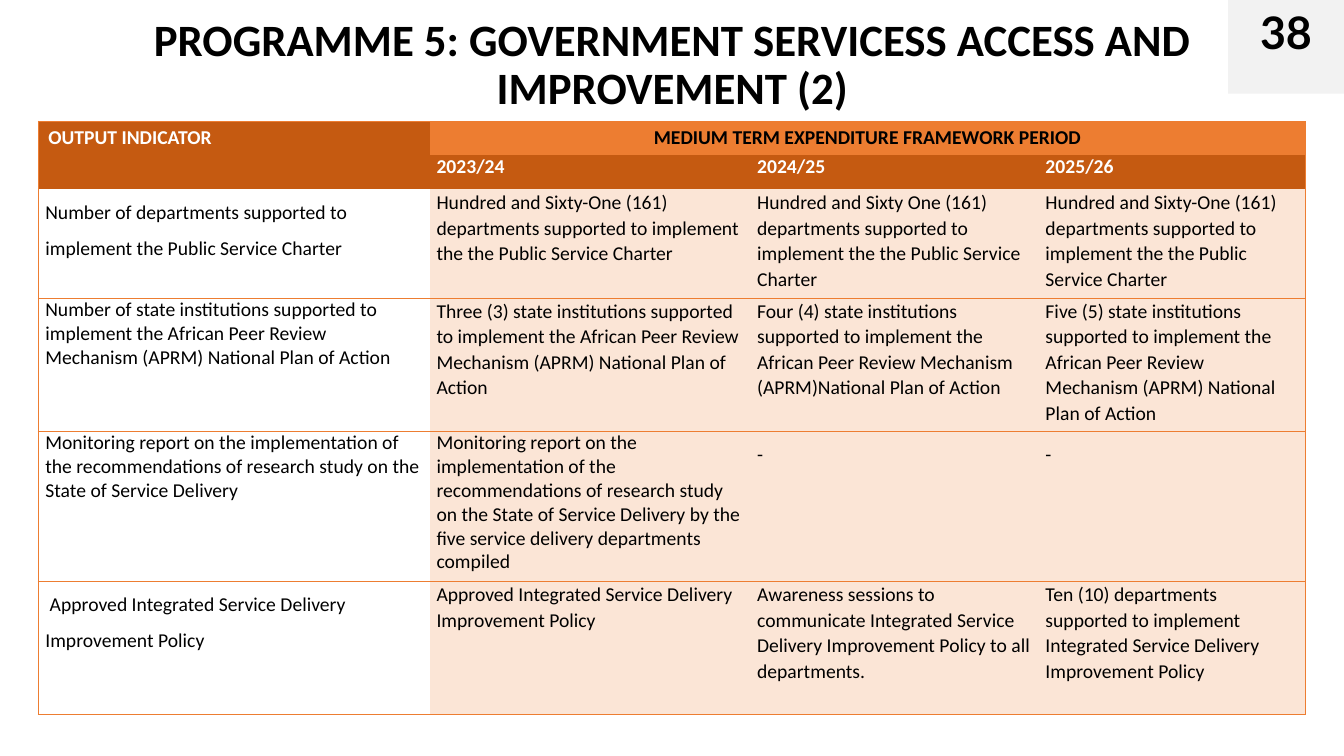
from dataclasses import dataclass

from lxml.etree import SubElement
from pptx import Presentation
from pptx.dml.color import RGBColor
from pptx.enum.shapes import MSO_SHAPE
from pptx.enum.text import MSO_ANCHOR, PP_ALIGN
from pptx.oxml.ns import qn
from pptx.util import Inches, Pt


@dataclass(frozen=True)
class Theme:
    black: str = "000000"
    white: str = "FFFFFF"
    orange: str = "ED7D31"
    dark_orange: str = "C55A11"
    peach: str = "FBE5D6"
    grey: str = "F2F2F2"
    font: str = "Calibri"
    number_font: str = "Lato"
    title_size: int = 32
    body_size: int = 14
    border: float = 0.5


THEME = Theme()
PLAIN_STYLE = "{2D5ABB26-0587-4C30-8999-92F81FD0307C}"
TITLE = "PROGRAMME 5: GOVERNMENT SERVICESS ACCESS AND IMPROVEMENT (2)"
PERIOD = "MEDIUM TERM EXPENDITURE FRAMEWORK PERIOD"
YEARS = ["2023/24", "2024/25", "2025/26"]
COL_WIDTHS = [3.88, 3.18, 2.86, 2.65]
ROW_HEIGHTS = [0.34, 0.33, 1.08, 1.32, 1.49, 1.32]
INDICATORS = [
    [("Number of departments supported to implement the Public Service Charter", 1.5),
     ("Hundred and Sixty-One (161) departments supported to implement the the Public Service Charter", 1.07),
     ("Hundred and Sixty One (161) departments supported to implement the the Public Service Charter", 1.07),
     ("Hundred and Sixty-One (161) departments supported to implement the the Public Service Charter", 1.07)],
    [("Number of state institutions supported to implement the African Peer Review Mechanism (APRM) "
      "National Plan of Action", 1),
     ("Three (3) state institutions supported to implement the African Peer Review Mechanism (APRM) "
      "National Plan of Action", 1.07),
     ("Four (4) state institutions supported to implement the African Peer Review Mechanism "
      "(APRM)National Plan of Action", 1.07),
     ("Five (5) state institutions supported to implement the African Peer Review Mechanism (APRM) "
      "National Plan of Action", 1.07)],
    [("Monitoring report on the implementation of the recommendations of research study on the "
      "State of Service Delivery", 1),
     ("Monitoring report on the implementation of the recommendations of research study on the "
      "State of Service Delivery by the five service delivery departments compiled", 1),
     ("-", 1.5),
     ("-", 1.5)],
    [(" Approved Integrated Service Delivery Improvement Policy", 1.5),
     ("Approved Integrated Service Delivery Improvement Policy", 1.07),
     ("Awareness sessions to communicate Integrated Service Delivery Improvement Policy to all "
      "departments.", 1.07),
     ("Ten (10) departments\nsupported to implement Integrated Service Delivery Improvement Policy", 1.07)],
]


def write(tf, text, size, color, bold=False, align=PP_ALIGN.LEFT, spacing=1.0, font=THEME.font):
    tf.text = text
    for p in tf.paragraphs:
        layout = {"alignment": align, "line_spacing": float(spacing),
                  "space_before": Pt(0), "space_after": Pt(0)}
        for name, value in layout.items():
            setattr(p, name, value)
        for r in p.runs:
            for name, value in {"name": font, "size": Pt(size), "bold": bold}.items():
                setattr(r.font, name, value)
            r.font.color.rgb = RGBColor.from_string(color)


def place(sp, box):
    for name, value in zip(("left", "top", "width", "height"), box):
        setattr(sp, name, Inches(value))


def add_title(s, box):
    sp = s.shapes.title
    place(sp, box)
    tf = sp.text_frame
    tf.word_wrap = True
    tf.vertical_anchor = MSO_ANCHOR.MIDDLE
    write(tf, TITLE, THEME.title_size, THEME.black, True, PP_ALIGN.CENTER, 0.9)


def add_page_number(s, box):
    sp = s.shapes.add_shape(MSO_SHAPE.RECTANGLE, *map(Inches, box))
    sp.shadow.inherit = False
    sp.fill.solid()
    sp.fill.fore_color.rgb = RGBColor.from_string(THEME.grey)
    sp.line.fill.background()
    sp.text_frame.vertical_anchor = MSO_ANCHOR.TOP
    write(sp.text_frame, "38", THEME.title_size, THEME.black, True, PP_ALIGN.CENTER,
          font=THEME.number_font)


def set_borders(cell, sides):
    tc_pr = cell._tc.get_or_add_tcPr()
    for side in sides:
        ln = SubElement(tc_pr, qn(f"a:ln{side}"), w=str(Pt(THEME.border)))
        fill = SubElement(ln, qn("a:solidFill"))
        SubElement(fill, qn("a:srgbClr"), val=THEME.orange)


def border_sides(row, col):
    last_row, last_col = len(ROW_HEIGHTS) - 1, len(COL_WIDTHS) - 1
    rules = {"L": col == 0, "R": col == last_col,
             "T": row == 0 or row > 2, "B": 2 <= row <= last_row}
    return [side for side, shown in rules.items() if shown]


def cell_fill(row, col):
    if row < 2:
        return THEME.orange if row == 0 and col else THEME.dark_orange
    return THEME.peach if col else None


def format_cell(cell, row, col):
    side = 0.1 if row == 0 else 0.07
    edge = 0.05 if row == 0 and col < 2 else 0
    margins = {"margin_left": side, "margin_right": side, "margin_top": edge, "margin_bottom": edge}
    for name, value in margins.items():
        setattr(cell, name, Inches(value))
    set_borders(cell, border_sides(row, col))
    color = cell_fill(row, col)
    if color:
        cell.fill.solid()
        cell.fill.fore_color.rgb = RGBColor.from_string(color)
    else:
        cell.fill.background()


def add_indicator_table(s, box):
    frame = s.shapes.add_table(len(ROW_HEIGHTS), len(COL_WIDTHS), *map(Inches, box))
    tbl = frame.table
    frame._element.find(f".//{qn('a:tableStyleId')}").text = PLAIN_STYLE
    for name in ("first_row", "horz_banding"):
        setattr(tbl, name, False)
    for column, width in zip(tbl.columns, COL_WIDTHS):
        column.width = Inches(width)
    for row, height in zip(tbl.rows, ROW_HEIGHTS):
        row.height = Inches(height)
    for row in range(len(ROW_HEIGHTS)):
        for col in range(len(COL_WIDTHS)):
            format_cell(tbl.cell(row, col), row, col)
    tbl.cell(0, 0).merge(tbl.cell(1, 0))
    tbl.cell(0, 1).merge(tbl.cell(0, 3))
    size = THEME.body_size
    write(tbl.cell(0, 0).text_frame, "OUTPUT INDICATOR", size, THEME.white, True)
    write(tbl.cell(0, 1).text_frame, PERIOD, size, THEME.black, True, PP_ALIGN.CENTER)
    for col, year in enumerate(YEARS, 1):
        write(tbl.cell(1, col).text_frame, year, size, THEME.white, True)
    for row, entries in enumerate(INDICATORS, 2):
        for col, (text, spacing) in enumerate(entries):
            write(tbl.cell(row, col).text_frame, text, size, THEME.black, spacing=spacing)


def main():
    prs = Presentation()
    prs.slide_width, prs.slide_height = Inches(13.33), Inches(7.5)
    s = prs.slides.add_slide(prs.slide_layouts[5])
    add_title(s, (0.92, 0.17, 11.5, 0.97))
    add_indicator_table(s, (0.38, 1.2, sum(COL_WIDTHS), sum(ROW_HEIGHTS)))
    add_page_number(s, (12.18, 0, 1.15, 0.93))
    prs.save("out.pptx")


if __name__ == "__main__":
    main()
